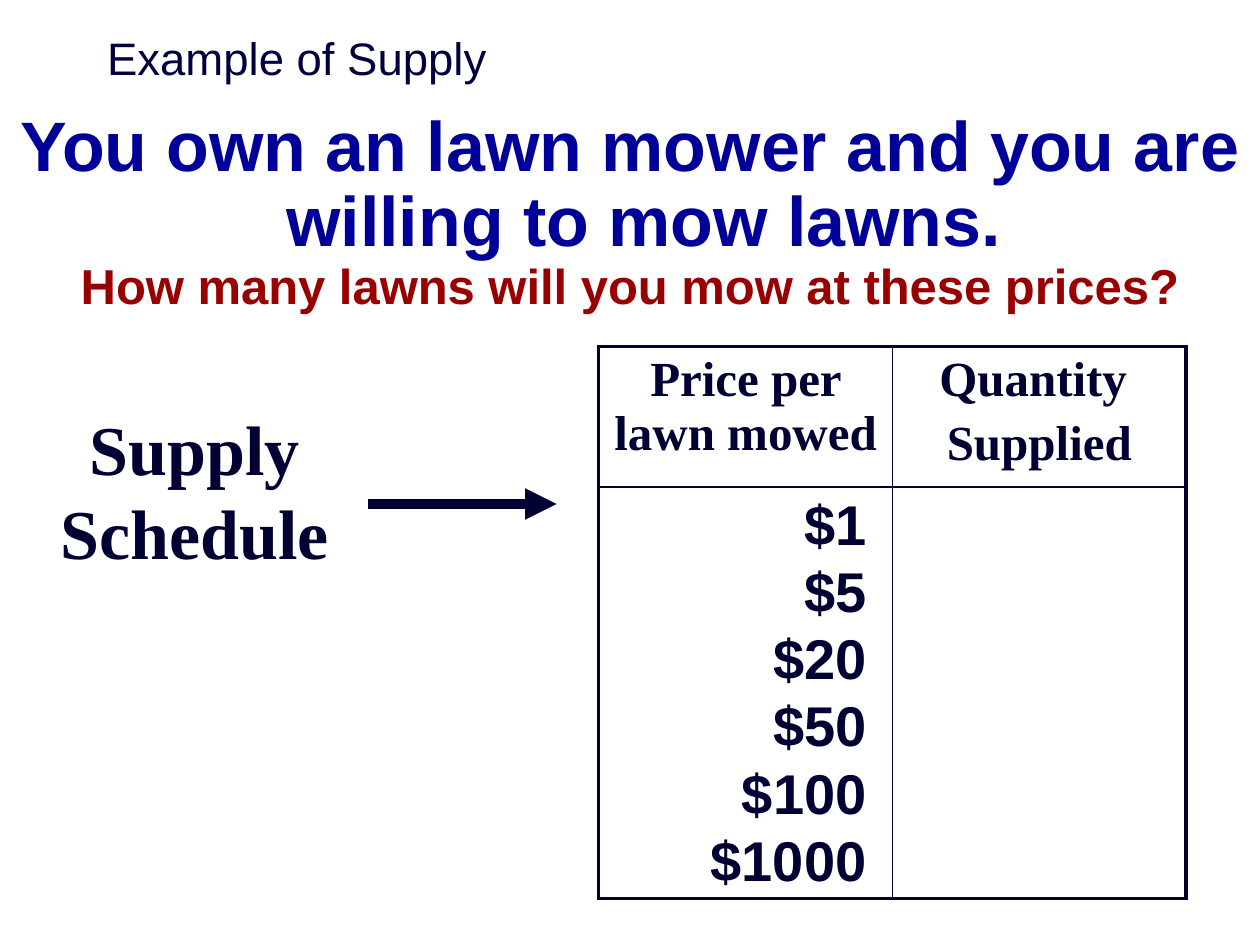
from lxml.etree import SubElement
from pptx import Presentation
from pptx.dml.color import RGBColor
from pptx.enum.shapes import MSO_CONNECTOR
from pptx.enum.text import MSO_ANCHOR, PP_ALIGN
from pptx.oxml.ns import qn
from pptx.util import Cm, Pt

TITLE_NAVY = RGBColor(0x00, 0x00, 0x3E)
INK = RGBColor(0x00, 0x00, 0x32)
BLUE = RGBColor(0x00, 0x00, 0x99)
RED = RGBColor(0x99, 0x00, 0x00)
SANS = "Arial"
SERIF = "Times New Roman"
PRICES = ["$1", "$5", "$20", "$50", "$100", "$1000"]
HEADINGS = [["Price per lawn mowed"], ["Quantity ", "Supplied"]]


def write_lines(frame, lines, font_name, size, color, bold=True,
                align=PP_ALIGN.CENTER, spacing=None, gap=0):
    """Fill a text frame with equally styled paragraphs."""
    frame.text = "\n".join(lines)
    for index, paragraph in enumerate(frame.paragraphs):
        paragraph.alignment = align
        if spacing:
            paragraph.line_spacing = spacing
        if index and gap:
            paragraph.space_before = Pt(gap)
        for run in paragraph.runs:
            run.font.name = font_name
            run.font.size = Pt(size)
            run.font.bold = bold
            run.font.color.rgb = color


def add_text(slide, box, lines, font_name, size, color,
             anchor=MSO_ANCHOR.TOP, **style):
    """Add a wrapping text box and return its frame."""
    frame = slide.shapes.add_textbox(*map(Cm, box)).text_frame
    frame.word_wrap = True
    frame.vertical_anchor = anchor
    write_lines(frame, lines, font_name, size, color, **style)
    return frame


def add_question(slide):
    """Add the scenario and the question below it."""
    frame = add_text(slide, (0, 2.11, 25.4, 11.43),
                     ["You own an lawn mower and you are willing to mow lawns. ",
                      "How many lawns will you mow at these prices?"],
                     SANS, 40, BLUE, spacing=0.9)
    for paragraph in frame.paragraphs:
        properties = paragraph._p.get_or_add_pPr()
        properties.set("marL", str(Cm(0.95)))
        properties.set("indent", str(Cm(-0.95)))
    question = frame.paragraphs[1].runs[0].font
    question.size = Pt(28)
    question.color.rgb = RED


def set_borders(cell, widths):
    """Draw the left, right, top and bottom borders of a cell."""
    properties = cell._tc.get_or_add_tcPr()
    for position, (side, width) in enumerate(zip("LRTB", widths)):
        border = properties.makeelement(qn(f"a:ln{side}"), {"w": str(Pt(width))})
        fill = SubElement(border, qn("a:solidFill"))
        SubElement(fill, qn("a:srgbClr"), val=str(INK))
        properties.insert(position, border)


def add_schedule(slide):
    """Add the supply schedule with a heavy frame and thin inner rules."""
    schedule = slide.shapes.add_table(
        2, 2, Cm(12.07), Cm(6.99), Cm(11.84), Cm(11.11)).table
    schedule.first_row = schedule.horz_banding = False
    for column in schedule.columns:
        column.width = Cm(5.92)
    for row, height in zip(schedule.rows, (2.81, 8.3)):
        row.height = Cm(height)
    for row in range(2):
        for column in range(2):
            cell = schedule.cell(row, column)
            cell.fill.background()
            outer = (column == 0, column == 1, row == 0, row == 1)
            set_borders(cell, [2.25 if edge else 1 for edge in outer])
    for column, heading in enumerate(HEADINGS):
        write_lines(schedule.cell(0, column).text_frame, heading,
                    SERIF, 28, INK, gap=5.6)


def add_arrow(slide, start, end):
    """Add a thick arrow between two points."""
    arrow = slide.shapes.add_connector(
        MSO_CONNECTOR.STRAIGHT, *map(Cm, start + end))
    arrow.line.color.rgb = INK
    arrow.line.width = Pt(6)
    SubElement(arrow.line._get_or_add_ln(), qn("a:tailEnd"), type="triangle")
    SubElement(arrow._element.spPr, qn("a:effectLst"))


def main():
    """Build the supply slide and save it."""
    deck = Presentation()
    deck.slide_width, deck.slide_height = Cm(25.4), Cm(19.05)
    slide = deck.slides.add_slide(deck.slide_layouts[6])
    add_text(slide, (1.91, -0.43, 21.59, 3.18), ["Example of Supply"], SANS, 26,
             TITLE_NAVY, anchor=MSO_ANCHOR.MIDDLE, bold=False,
             align=PP_ALIGN.LEFT)
    add_question(slide)
    add_schedule(slide)
    add_text(slide, (0.85, 8.05, 6.15, 3.63), ["Supply Schedule"],
             SERIF, 40, INK)
    add_arrow(slide, (7.41, 10.16), (11.22, 10.16))
    add_text(slide, (13.55, 9.74, 4.17, 8.38), PRICES, SANS, 32, INK,
             align=PP_ALIGN.RIGHT)
    deck.save("out.pptx")


if __name__ == "__main__":
    main()
